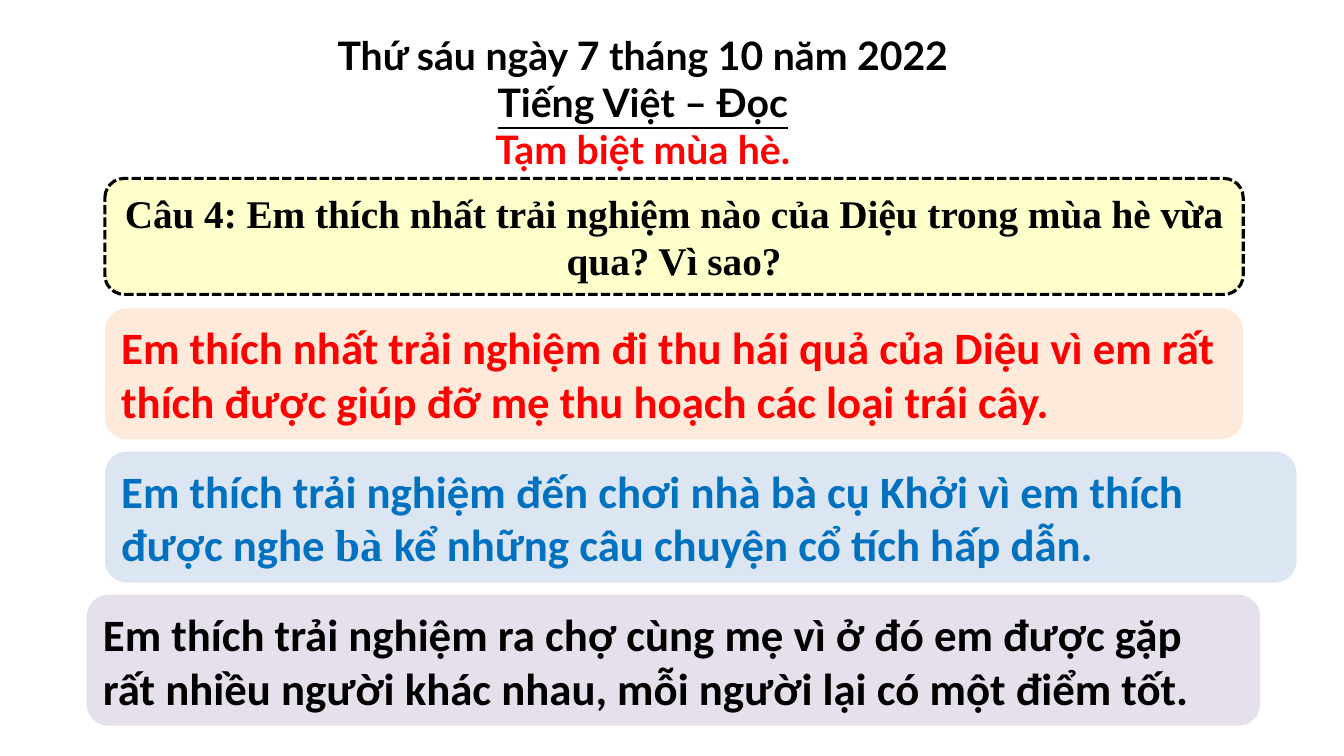
import pptx
import pptx.dml.color
import pptx.enum.dml
import pptx.enum.shapes
import pptx.enum.text
import pptx.util

Inches, Pt = pptx.util.Inches, pptx.util.Pt
ALIGN = pptx.enum.text.PP_ALIGN
MIDDLE = pptx.enum.text.MSO_ANCHOR.MIDDLE

# Content: heading lines are (text, colour, underlined)
HEADING = [
    ("Thứ sáu ngày 7 tháng 10 năm 2022", "000000", False),
    ("Tiếng Việt – Đọc", "000000", True),
    ("Tạm biệt mùa hè.", "FF0000", False),
]
QUESTION = "Câu 4: Em thích nhất trải nghiệm nào của Diệu trong mùa hè vừa qua? Vì sao?"
# Answers are (left, width, fill, text colour, runs of (text, font))
ANSWERS = [
    (1.04, 11.29, "FDEADA", "FF0000", [
        ("Em thích nhất trải nghiệm đi thu hái quả của Diệu vì em rất "
         "thích được giúp đỡ mẹ thu hoạch các loại trái cây.", "Calibri")]),
    (1.04, 11.82, "DCE6F2", "0070C0", [
        ("Em thích trải nghiệm đến chơi nhà bà cụ Khởi vì em thích được nghe ", "Calibri"),
        ("bà ", "Times New Roman"),
        ("kể những câu chuyện cổ tích hấp dẫn.", "Calibri")]),
    (0.86, 11.64, "E6E0EC", "000000", [
        ("Em thích trải nghiệm ra chợ cùng mẹ vì ở đó em được gặp "
         "rất nhiều người khác nhau, mỗi người lại có một điểm tốt.", "Calibri")]),
]
ANSWER_TOP, ANSWER_HEIGHT, ANSWER_STEP = 3.06, 1.3, 1.42


def rgb(value):
    return pptx.dml.color.RGBColor.from_string(value)


def add_run(p, text, font, size, color, underline=False):
    r = p.add_run()
    r.text = text
    r.font.name, r.font.size, r.font.bold = font, Pt(size), True
    r.font.underline = underline
    r.font.color.rgb = rgb(color)


def add_panel(left, top, width, height, fill, align):
    """Add a rounded panel and return it with its first paragraph."""
    sp = slide.shapes.add_shape(
        pptx.enum.shapes.MSO_SHAPE.ROUNDED_RECTANGLE,
        Inches(left), Inches(top), Inches(width), Inches(height))
    sp.shadow.inherit = False
    sp.fill.solid()
    sp.fill.fore_color.rgb = rgb(fill)
    sp.line.fill.background()
    tf = sp.text_frame
    tf.word_wrap = True
    tf.vertical_anchor = MIDDLE
    p = tf.paragraphs[0]
    p.alignment = align
    return sp, p


prs = pptx.Presentation()
prs.slide_width, prs.slide_height = Inches(13.33), Inches(7.5)
slide = prs.slides.add_slide(prs.slide_layouts[5])

# Heading
title = slide.shapes.title
title.left, title.top = Inches(2.35), Inches(0.26)
title.width, title.height = Inches(8.05), Inches(1.51)
tf = title.text_frame
tf.word_wrap = True
tf.auto_size = pptx.enum.text.MSO_AUTO_SIZE.NONE
tf.vertical_anchor = pptx.enum.text.MSO_ANCHOR.TOP
for i, (text, color, underline) in enumerate(HEADING):
    p = tf.add_paragraph() if i else tf.paragraphs[0]
    p.alignment = ALIGN.CENTER
    add_run(p, text, "Lato", 28, color, underline)

# Question
sp, p = add_panel(1.04, 1.77, 11.29, 1.15, "FFFFCC", ALIGN.CENTER)
sp.line.color.rgb = rgb("000000")
sp.line.width = Pt(2.25)
sp.line.dash_style = pptx.enum.dml.MSO_LINE.SQUARE_DOT
add_run(p, QUESTION, "Times New Roman", 28, "000000")

# Answers
for i, (left, width, fill, color, runs) in enumerate(ANSWERS):
    top = ANSWER_TOP + i * ANSWER_STEP
    sp, p = add_panel(left, top, width, ANSWER_HEIGHT, fill, ALIGN.LEFT)
    for text, font in runs:
        add_run(p, text, font, 32, color)

prs.save("out.pptx")
